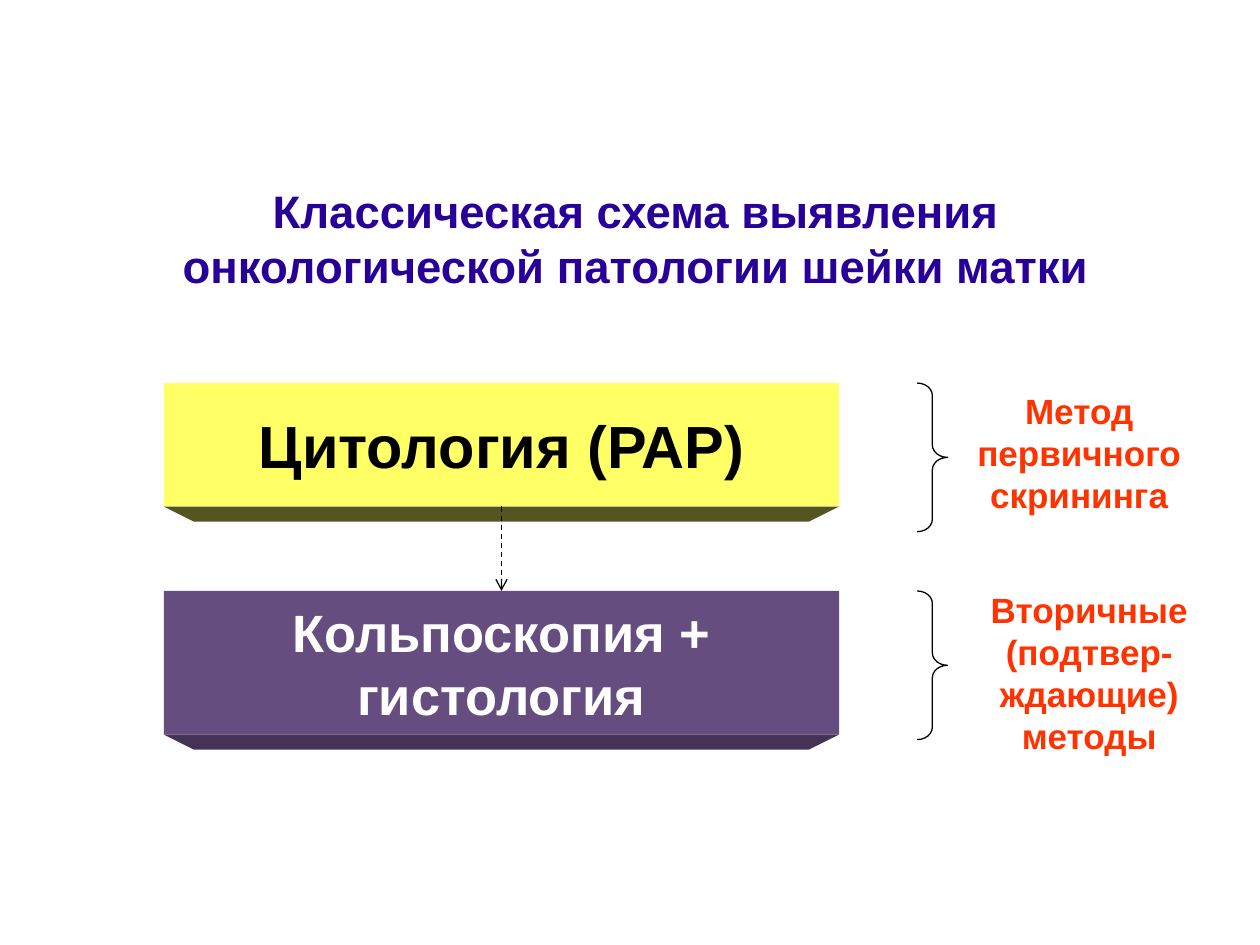
from lxml.etree import SubElement
from pptx import Presentation
from pptx.dml.color import RGBColor
from pptx.enum.dml import MSO_LINE
from pptx.enum.shapes import MSO_CONNECTOR, MSO_SHAPE
from pptx.enum.text import MSO_ANCHOR, PP_ALIGN
from pptx.oxml.ns import qn
from pptx.util import Inches, Pt

COLORS = {
    "title": "280099", "black": "000000", "white": "FFFFFF", "note": "FF3300",
    "yellow": "FFFF66", "yellow_edge": "555522",
    "purple": "664D80", "purple_edge": "443355",
}
BLOCK_LEFT, BLOCK_WIDTH = 1.3, 5.36
BLOCK_CENTER = BLOCK_LEFT + BLOCK_WIDTH / 2
BEVEL_INSET, BEVEL_HEIGHT = 0.24, 0.12


def color(name):
    """Return the named colour."""
    return RGBColor.from_string(COLORS[name])


def write_text(shape, text, size, color_name, anchor, space_before=0):
    """Fill a shape with centred bold text."""
    frame = shape.text_frame
    frame.text = text
    frame.word_wrap = True
    frame.vertical_anchor = anchor
    for para in frame.paragraphs:
        para.alignment = PP_ALIGN.CENTER
        para.space_before = Pt(space_before)
        for span in para.runs:
            span.font.name = "Arial"
            span.font.size = Pt(size)
            span.font.bold = True
            span.font.color.rgb = color(color_name)


def paint(shape, fill_name):
    """Give a shape a plain fill without line or shadow."""
    shape.shadow.inherit = False
    shape.fill.solid()
    shape.fill.fore_color.rgb = color(fill_name)
    shape.line.fill.background()


def add_title(page, text):
    """Place and format the slide title."""
    title = page.shapes.title
    title.left, title.top = Inches(0.59), Inches(1.4)
    title.width, title.height = Inches(8.91), Inches(0.97)
    write_text(title, text, 26, "title", MSO_ANCHOR.MIDDLE)


def add_block(page, top, height, text, size, fill_name, text_color):
    """Add a method block with a bevelled lower edge."""
    face = page.shapes.add_shape(
        MSO_SHAPE.RECTANGLE, Inches(BLOCK_LEFT), Inches(top),
        Inches(BLOCK_WIDTH), Inches(height))
    paint(face, fill_name)
    write_text(face, text, size, text_color, MSO_ANCHOR.MIDDLE)
    right, bottom = BLOCK_LEFT + BLOCK_WIDTH, top + height
    builder = page.shapes.build_freeform(
        Inches(BLOCK_LEFT), Inches(bottom))
    builder.add_line_segments([
        (Inches(right), Inches(bottom)),
        (Inches(right - BEVEL_INSET), Inches(bottom + BEVEL_HEIGHT)),
        (Inches(BLOCK_LEFT + BEVEL_INSET), Inches(bottom + BEVEL_HEIGHT)),
    ], close=True)
    paint(builder.convert_to_shape(), fill_name + "_edge")


def add_arrow(page, top, bottom):
    """Add a dashed downward arrow between the blocks."""
    arrow = page.shapes.add_connector(
        MSO_CONNECTOR.STRAIGHT, Inches(BLOCK_CENTER), Inches(top),
        Inches(BLOCK_CENTER), Inches(bottom))
    arrow.line.color.rgb = color("black")
    arrow.line.width = Pt(0.75)
    arrow.line.dash_style = MSO_LINE.DASH
    SubElement(arrow.line._get_or_add_ln(), qn("a:tailEnd"), type="arrow")
    SubElement(arrow._element.spPr, qn("a:effectLst"))


def add_brace(page, top):
    """Add a right brace beside a block."""
    brace = page.shapes.add_shape(
        MSO_SHAPE.RIGHT_BRACE, Inches(7.28), Inches(top),
        Inches(0.24), Inches(1.18))
    brace.adjustments[0] = 0.41
    brace.shadow.inherit = False
    brace.fill.background()
    brace.line.color.rgb = color("black")
    brace.line.width = Pt(0.75)


def add_note(page, left, top, height, text):
    """Add the explanation beside a brace."""
    box = page.shapes.add_textbox(
        Inches(left), Inches(top), Inches(1.93), Inches(height))
    write_text(box, text, 20, "note", MSO_ANCHOR.TOP, 12.4)


def main():
    """Build and save the slide."""
    deck = Presentation()
    deck.slide_width, deck.slide_height = Inches(10), Inches(7.5)
    page = deck.slides.add_slide(deck.slide_layouts[5])
    add_title(page, "Классическая схема выявления онкологической патологии шейки матки")
    add_block(page, 3.04, 0.98, "Цитология (РАР)", 34, "yellow", "black")
    add_block(page, 4.69, 1.14, "Кольпоскопия +\nгистология", 30, "purple", "white")
    add_arrow(page, 4.02, 4.69)
    for top in (3.04, 4.69):
        add_brace(page, top)
    add_note(page, 7.6, 3.04, 1.1, "Метод первичного скрининга")
    add_note(page, 7.68, 4.62, 1.44, "Вторичные (подтвер-ждающие) методы")
    deck.save("out.pptx")


if __name__ == "__main__":
    main()
